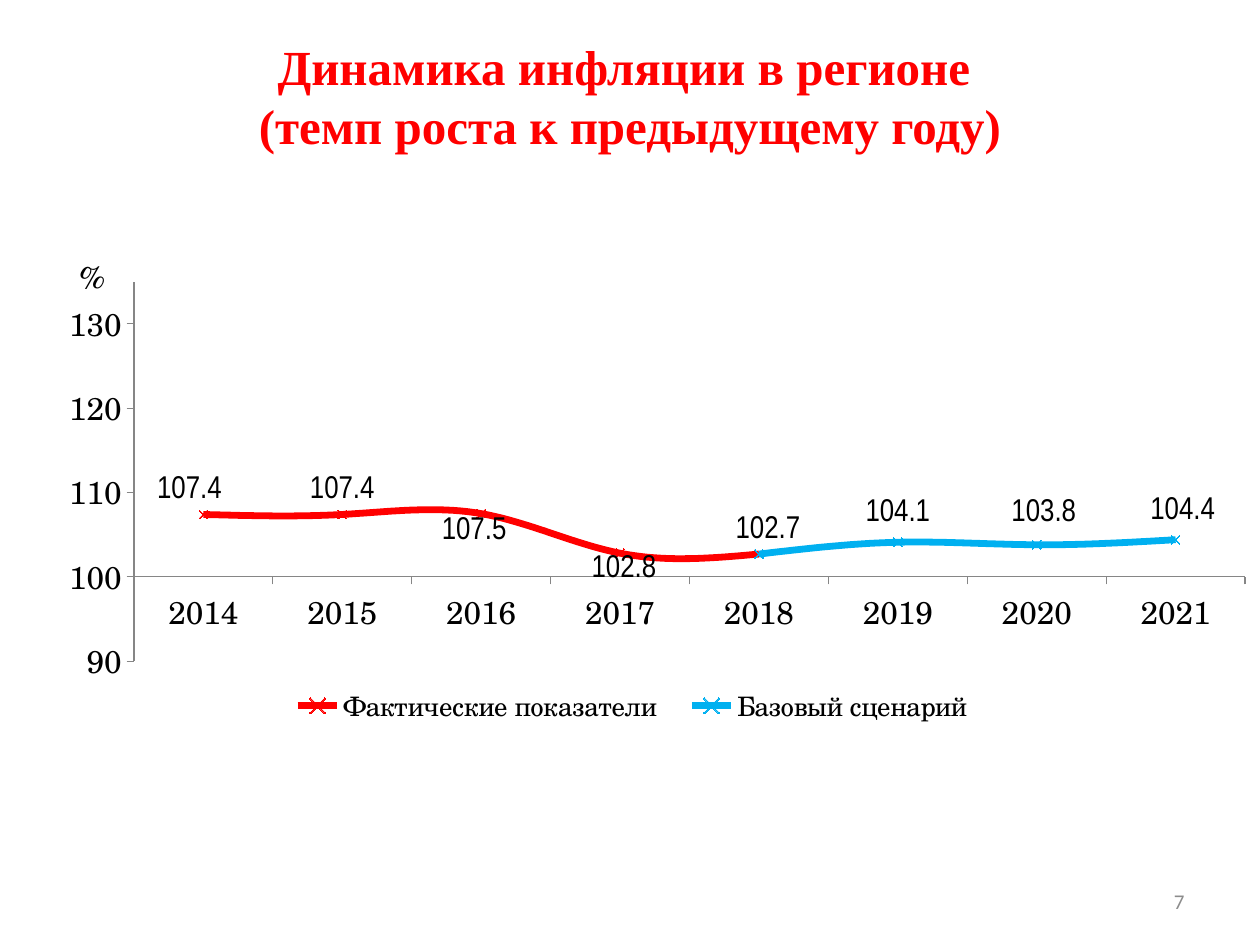
"""Builds a slide with a smoothed line chart of regional inflation."""
from lxml.etree import SubElement
from pptx import Presentation
from pptx.chart.data import CategoryChartData
from pptx.dml.color import RGBColor
from pptx.enum.chart import XL_CHART_TYPE as ChartType
from pptx.enum.chart import XL_LABEL_POSITION as LabelPosition
from pptx.enum.chart import XL_LEGEND_POSITION as LegendPosition
from pptx.enum.chart import XL_MARKER_STYLE as MarkerStyle
from pptx.enum.chart import XL_TICK_MARK as TickMark
from pptx.enum.dml import MSO_LINE
from pptx.enum.text import MSO_ANCHOR, PP_ALIGN
from pptx.oxml.ns import qn
from pptx.util import Emu, Pt

PX = 914400 // 126
RED = RGBColor(0xFF, 0x00, 0x00)
BLUE = RGBColor(0x00, 0xB0, 0xF0)
BLACK = RGBColor(0x00, 0x00, 0x00)
WHITE = RGBColor(0xFF, 0xFF, 0xFF)
AXIS_GRAY = RGBColor(0x86, 0x86, 0x86)
NUMBER_GRAY = RGBColor(0x8C, 0x8C, 0x8C)
AXIS_FONT = "TeX Gyre Schola"
LABEL_FONT = "Arial Narrow"
CHART_BOX = (24, 227, 1236, 595)
YEARS = [str(year) for year in range(2014, 2022)]
ACTUAL = [107.4, 107.4, 107.5, 102.8, 102.7, None, None, None]
FORECAST = [None, None, None, None, 102.7, 104.1, 103.8, 104.4]
ABOVE, BELOW = LabelPosition.ABOVE, LabelPosition.BELOW
ACTUAL_LABELS = {0: (ABOVE, -14, 0), 1: (ABOVE, 0, 0), 2: (BELOW, -7, -6), 3: (BELOW, 4, -7)}
FORECAST_LABELS = {4: (ABOVE, 9, 0), 5: (ABOVE, 0, -5), 6: (ABOVE, 7, -8), 7: (ABOVE, 7, -4)}


def px(*lengths):
    return [Emu(length * PX) for length in lengths]


def style_font(font, name, size, color, bold=False, italic=False):
    font.name, font.size, font.bold, font.italic = name, Pt(size), bold, italic
    font.color.rgb = color


def set_layout(parent, index, **values):
    for old in parent.findall(qn("c:layout")):
        parent.remove(old)
    layout = SubElement(parent, qn("c:layout"))
    manual = SubElement(layout, qn("c:manualLayout"))
    for tag, value in values.items():
        SubElement(manual, qn(f"c:{tag}")).set("val", str(value))
    parent.insert(index, layout)


def add_title(slide, lines):
    title = slide.shapes.title
    title.left, title.top, title.width, title.height = px(63, 16, 1134, 158)
    frame = title.text_frame
    frame.vertical_anchor = MSO_ANCHOR.MIDDLE
    paragraph = frame.paragraphs[0]
    paragraph.alignment = PP_ALIGN.CENTER
    for index, line in enumerate(lines):
        if index:
            paragraph.add_line_break()
        run = paragraph.add_run()
        run.text = line
        style_font(run.font, "Times New Roman", 28, RED, bold=True)


def add_slide_number(slide, number):
    frame = slide.shapes.add_textbox(*px(903, 876, 294, 50)).text_frame
    frame.word_wrap = True
    frame.vertical_anchor = MSO_ANCHOR.MIDDLE
    paragraph = frame.paragraphs[0]
    paragraph.alignment = PP_ALIGN.RIGHT
    run = paragraph.add_run()
    run.text = number
    style_font(run.font, "Calibri", 12, NUMBER_GRAY)


def style_axis(axis):
    axis.major_tick_mark = TickMark.OUTSIDE
    axis.minor_tick_mark = TickMark.NONE
    axis.format.line.color.rgb = AXIS_GRAY
    style_font(axis.tick_labels.font, AXIS_FONT, 18, BLACK)


def style_value_axis(axis):
    style_axis(axis)
    axis.minimum_scale, axis.maximum_scale, axis.major_unit = 90, 135, 10
    grid = axis.major_gridlines.format.line
    grid.color.rgb, grid.width, grid.dash_style = WHITE, Pt(0.32), MSO_LINE.LONG_DASH
    frame = axis.axis_title.text_frame
    frame._txBody.bodyPr.set("rot", "0")
    frame._txBody.bodyPr.set("vert", "horz")
    run = frame.paragraphs[0].add_run()
    run.text = "%"
    style_font(run.font, AXIS_FONT, 18, BLACK, italic=True)
    set_layout(axis.axis_title._element, 1, xMode="edge", yMode="edge", x=0.04, y=0.03)


def style_series(series, color, labels):
    series.smooth = True
    series.format.line.color.rgb = color
    series.format.line.width = Pt(3.89)
    marker = series.marker
    marker.style, marker.size = MarkerStyle.X, 5
    marker.format.fill.background()
    marker.format.line.color.rgb = color
    series.data_labels.show_value = False
    style_font(series.data_labels.font, LABEL_FONT, 18, BLACK)
    for index, (position, dx, dy) in labels.items():
        label = series.points[index].data_label
        style_font(label.font, LABEL_FONT, 18, BLACK)
        label.position = position
        element = next(item for item in series._element.iter(qn("c:dLbl"))
                       if item.find(qn("c:idx")).get("val") == str(index))
        set_layout(element, 1, x=round(dx / CHART_BOX[2], 4), y=round(dy / CHART_BOX[3], 4))


def style_legend(chart):
    chart.has_legend = True
    legend = chart.legend
    legend.position = LegendPosition.RIGHT
    legend.include_in_layout = False
    style_font(legend.font, AXIS_FONT, 15.3, BLACK)
    set_layout(legend._element, 1, xMode="edge", yMode="edge", x=0.2, y=0.77, w=0.59, h=0.07)


def add_inflation_chart(slide):
    data = CategoryChartData()
    data.categories = YEARS
    data.add_series("Фактические показатели", ACTUAL)
    data.add_series("Базовый сценарий ", FORECAST)
    chart = slide.shapes.add_chart(ChartType.LINE_MARKERS, *px(*CHART_BOX), data).chart
    chart.has_title = False
    style_font(chart.font, LABEL_FONT, 18, BLACK)
    plot = chart.plots[0]
    plot.vary_by_categories = False
    for series, color, labels in zip(plot.series, (RED, BLUE), (ACTUAL_LABELS, FORECAST_LABELS)):
        style_series(series, color, labels)
    style_axis(chart.category_axis)
    style_value_axis(chart.value_axis)
    chart.value_axis.crosses_at = 100
    style_legend(chart)
    plot_area = chart._chartSpace.chart.plotArea
    set_layout(plot_area, 0, layoutTarget="inner", xMode="edge", yMode="edge",
               x=0.089, y=0.092, w=0.899, h=0.638)


def main():
    presentation = Presentation()
    presentation.slide_width, presentation.slide_height = px(1260, 945)
    slide = presentation.slides.add_slide(presentation.slide_layouts[5])
    add_slide_number(slide, "7")
    add_title(slide, ["Динамика инфляции в регионе ", "(темп роста к предыдущему году)"])
    add_inflation_chart(slide)
    presentation.save("out.pptx")


if __name__ == "__main__":
    main()
